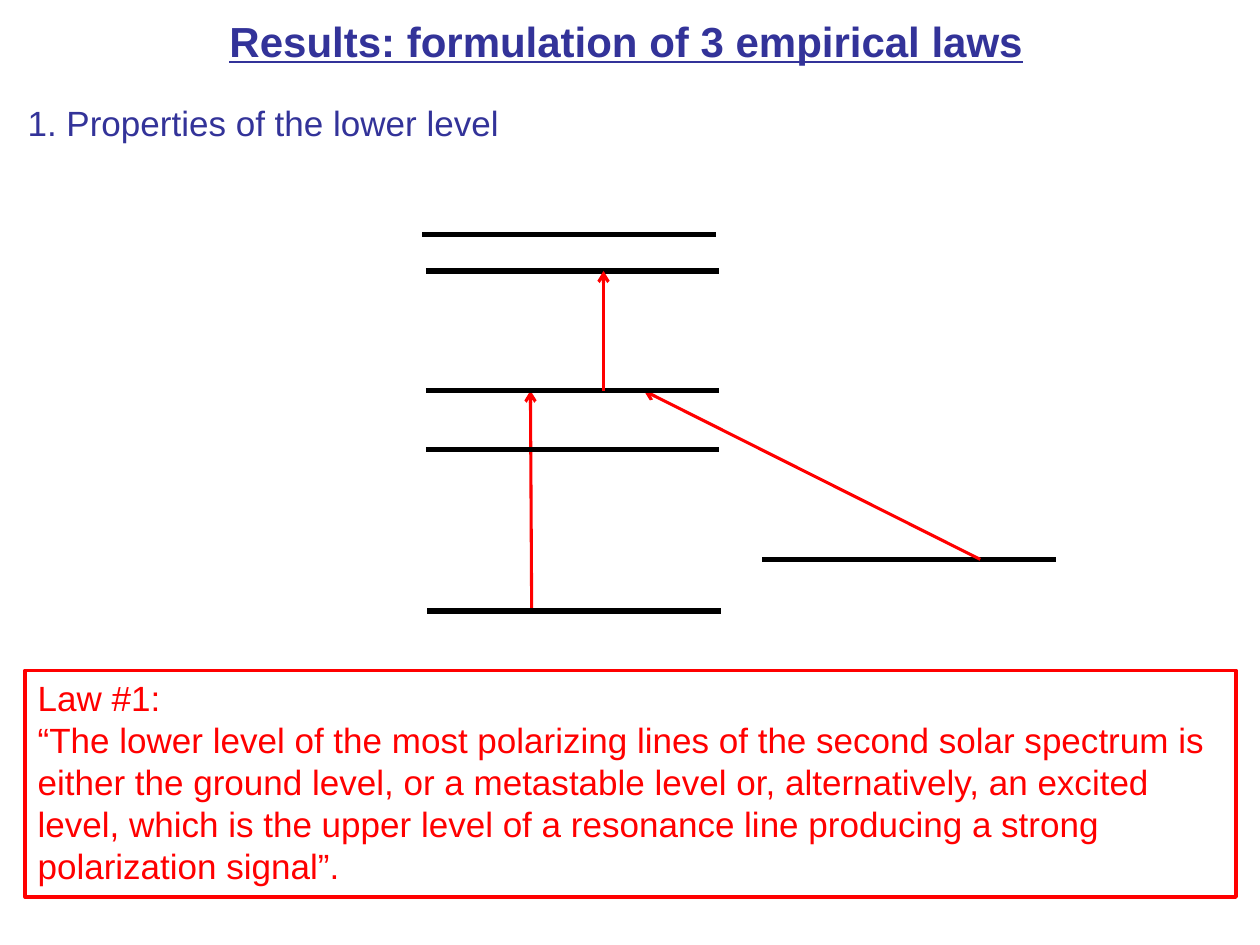
"""Build a slide on the first empirical law, with an energy level diagram."""
from typing import NamedTuple

from lxml.etree import SubElement
from pptx import Presentation
from pptx.dml.color import RGBColor
from pptx.enum.shapes import MSO_CONNECTOR, MSO_SHAPE
from pptx.enum.text import MSO_ANCHOR, PP_ALIGN
from pptx.oxml.ns import qn
from pptx.util import Inches, Pt

COLORS = {"heading": "333399", "law": "FF0000", "level": "000000"}
LEVEL_WIDTH = 2.33


class Level(NamedTuple):
    left: float
    y: float


class Transition(NamedTuple):
    x1: float
    y1: float
    x2: float
    y2: float


GROUND = Level(3.39, 4.85)
METASTABLE = Level(6.05, 4.44)
LOWER = Level(3.38, 3.57)
EXCITED = Level(3.38, 3.1)
UPPER = Level(3.38, 2.15)
TOP = Level(3.35, 1.86)

PUMPING = Transition(4.22, GROUND.y, 4.21, EXCITED.y)
ITEMS = [
    PUMPING,
    GROUND,
    METASTABLE,
    Transition(7.78, METASTABLE.y, 5.11, EXCITED.y),
    UPPER,
    LOWER,
    EXCITED,
    Transition(4.79, EXCITED.y, 4.79, UPPER.y),
    TOP,
]
LAW = [
    "Law #1:",
    "“The lower level of the most polarizing lines of the second solar "
    "spectrum is either the ground level, or a metastable level or, "
    "alternatively, an excited level, which is the upper level of a "
    "resonance line producing a strong polarization signal”.",
]


def rgb(name: str) -> RGBColor:
    return RGBColor.from_string(COLORS[name])


def place(sp, left: float, top: float, width: float, height: float) -> None:
    sp.left, sp.top = Inches(left), Inches(top)
    sp.width, sp.height = Inches(width), Inches(height)


def write(sp, text: str, size: int, color: str, align=PP_ALIGN.LEFT,
          heading: bool = False) -> None:
    tf = sp.text_frame
    tf.text = text
    tf.word_wrap = True
    tf.vertical_anchor = MSO_ANCHOR.TOP
    tf.margin_left = tf.margin_right = Inches(0.1)
    tf.margin_top = tf.margin_bottom = Inches(0.05)
    for p in tf.paragraphs:
        p.alignment = align
        p.line_spacing = 1.0
        p.space_before = Pt(0)
        for r in p.runs:
            r.font.name, r.font.size = "Arial", Pt(size)
            r.font.color.rgb = rgb(color)
            r.font.bold = r.font.underline = heading


def add_line(slide, ends: Transition, color: str, width: float):
    line = slide.shapes.add_connector(
        MSO_CONNECTOR.STRAIGHT, *(Inches(v) for v in ends))
    line.line.color.rgb = rgb(color)
    line.line.width = Pt(width)
    SubElement(line._element.spPr, qn("a:effectLst"))
    return line


def add_level(slide, level: Level) -> None:
    ends = Transition(level.left, level.y, level.left + LEVEL_WIDTH, level.y)
    add_line(slide, ends, "level", 3)


def add_transition(slide, transition: Transition) -> None:
    line = add_line(slide, transition, "law", 1.75)
    SubElement(line.line._get_or_add_ln(), qn("a:tailEnd"), type="arrow")


def main() -> None:
    prs = Presentation()
    prs.slide_width, prs.slide_height = Inches(10), Inches(7.5)
    s = prs.slides.add_slide(prs.slide_layouts[5])

    title = s.shapes.title
    place(title, 0.14, 0.07, 9.66, 0.5)
    write(title, "Results: formulation of 3 empirical laws", 24, "heading",
          PP_ALIGN.CENTER, heading=True)

    subtitle = s.shapes.add_textbox(0, 0, 0, 0)
    place(subtitle, 0.12, 0.76, 4.41, 0.43)
    write(subtitle, "1. Properties of the lower level", 20, "heading")

    for item in ITEMS:
        if isinstance(item, Level):
            add_level(s, item)
        else:
            add_transition(s, item)

    box = s.shapes.add_shape(MSO_SHAPE.RECTANGLE, 0, 0, 0, 0)
    place(box, 0.2, 5.32, 9.61, 1.8)
    box.shadow.inherit = False
    box.fill.background()
    box.line.color.rgb = rgb("law")
    box.line.width = Pt(2)
    write(box, "\n".join(LAW), 20, "law")

    prs.save("out.pptx")


if __name__ == "__main__":
    main()
